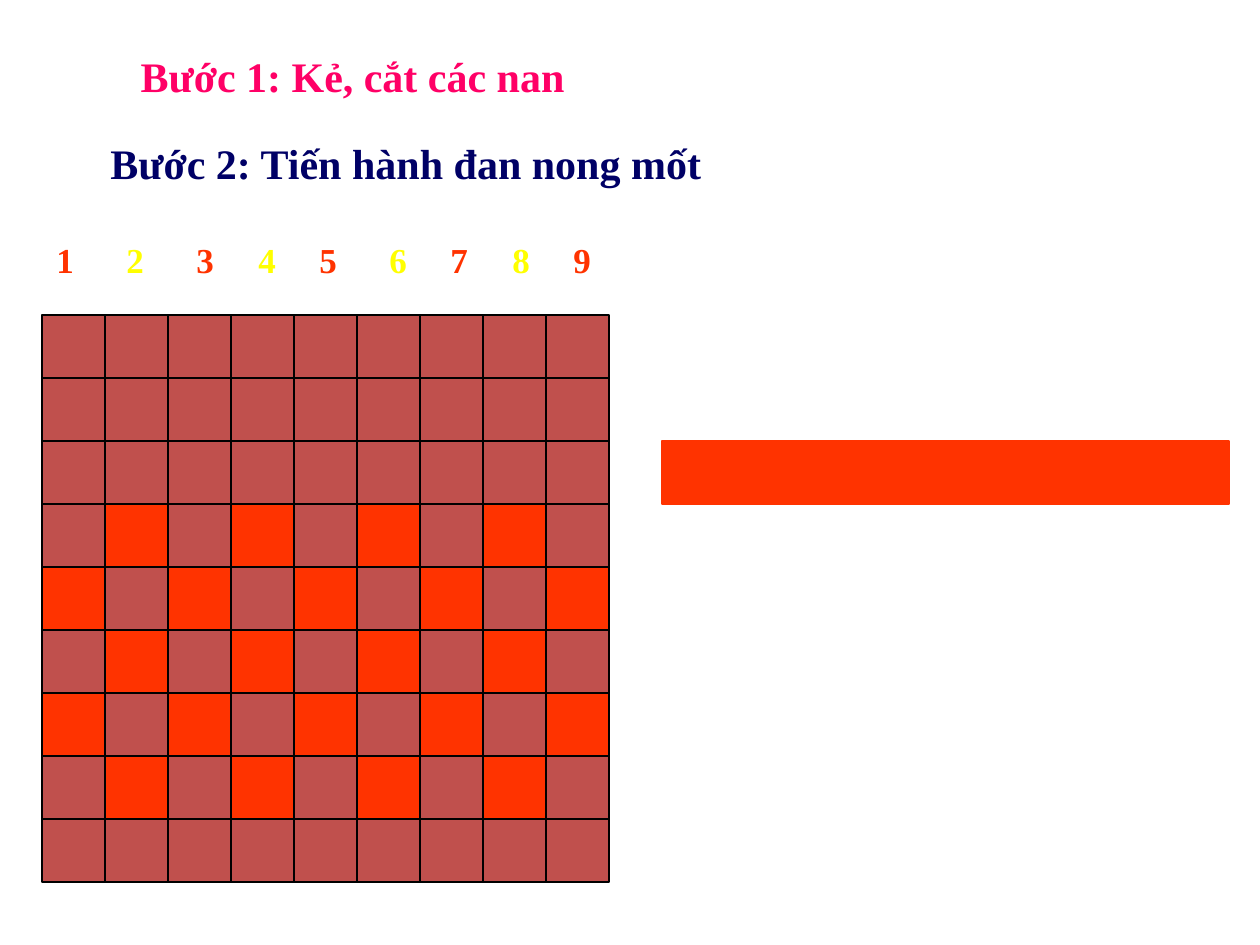
from pptx import Presentation
from pptx.dml.color import RGBColor
from pptx.enum import shapes, text
from pptx.oxml.ns import qn
from pptx.util import Emu, Pt
from lxml import etree

RED = RGBColor(0xFF, 0x33, 0x00)
BROWN = RGBColor(0xC0, 0x50, 0x4D)
YELLOW = RGBColor(0xFF, 0xFF, 0x00)
PINK = RGBColor(0xFF, 0x00, 0x66)
NAVY = RGBColor(0x00, 0x00, 0x66)
BLACK = RGBColor(0, 0, 0)
FONT = "Times New Roman"

# Content: steps and their boxes, strip numbers and their tab stops, in px
STEP1 = ("Bước 1: Kẻ, cắt các nan", (128, 44, 555, 63), PINK)
STEP2 = ("Bước 2: Tiến hành đan nong mốt", (98, 131, 701, 63), NAVY)
NUMBERS = range(1, 10)
NUM_BOX = (44, 232, 628, 54)
STOPS = (70, 140, 202, 263, 333, 394, 456, 517)

# Weaving grid and the loose strip, in px
CELL, COUNT = 63, 9
GRID = (42, 315)
STRIP = (662, 441)
WOVEN = range(3, 8)


def px(n):
    return Emu(round(n * 914400 / 126))


def place(shape, box):
    shape.left, shape.top, shape.width, shape.height = map(px, box)


def style(run, size, color):
    font = run.font
    font.name, font.size, font.bold = FONT, Pt(size), True
    font.color.rgb = color


def write(shape, words, box, color):
    place(shape, box)
    frame = shape.text_frame
    frame.text = words
    frame.word_wrap = True
    frame.auto_size = text.MSO_AUTO_SIZE.NONE
    frame.vertical_anchor = text.MSO_ANCHOR.TOP
    para = frame.paragraphs[0]
    para.alignment = text.PP_ALIGN.LEFT
    style(para.runs[0], 24, color)


def square(col, row, start, fill, line):
    x, y = start
    box = (x + col * CELL, y + row * CELL, CELL, CELL)
    cell = slide.shapes.add_shape(shapes.MSO_SHAPE.RECTANGLE, *map(px, box))
    cell.shadow.inherit = False
    cell.fill.solid()
    cell.fill.fore_color.rgb = fill
    cell.line.color.rgb = line
    cell.line.width = Pt(0.75)


deck = Presentation()
deck.slide_width, deck.slide_height = px(1260), px(945)
slide = deck.slides.add_slide(deck.slide_layouts[5])

# Steps
write(slide.shapes.title, *STEP1)
write(slide.shapes.add_textbox(0, 0, 0, 0), *STEP2)

# Woven grid: strips alternate over and under
for row in range(COUNT):
    for col in range(COUNT):
        over = row in WOVEN and (row + col) % 2 == 0
        square(col, row, GRID, RED if over else BROWN, BLACK)

# Loose strip
for col in range(COUNT):
    square(col, 0, STRIP, RED, RED)

# Strip numbers on tab stops
label = slide.shapes.add_textbox(*map(px, NUM_BOX))
label.text_frame.word_wrap = True
para = label.text_frame.paragraphs[0]
for n in NUMBERS:
    run = para.add_run()
    run.text = str(n) if n == 1 else f"\t{n}"
    style(run, 20, RED if n % 2 else YELLOW)
tabs = etree.SubElement(para._p.get_or_add_pPr(), qn("a:tabLst"))
for stop in STOPS:
    etree.SubElement(tabs, qn("a:tab"), pos=str(px(stop)), algn="l")

deck.save("out.pptx")
